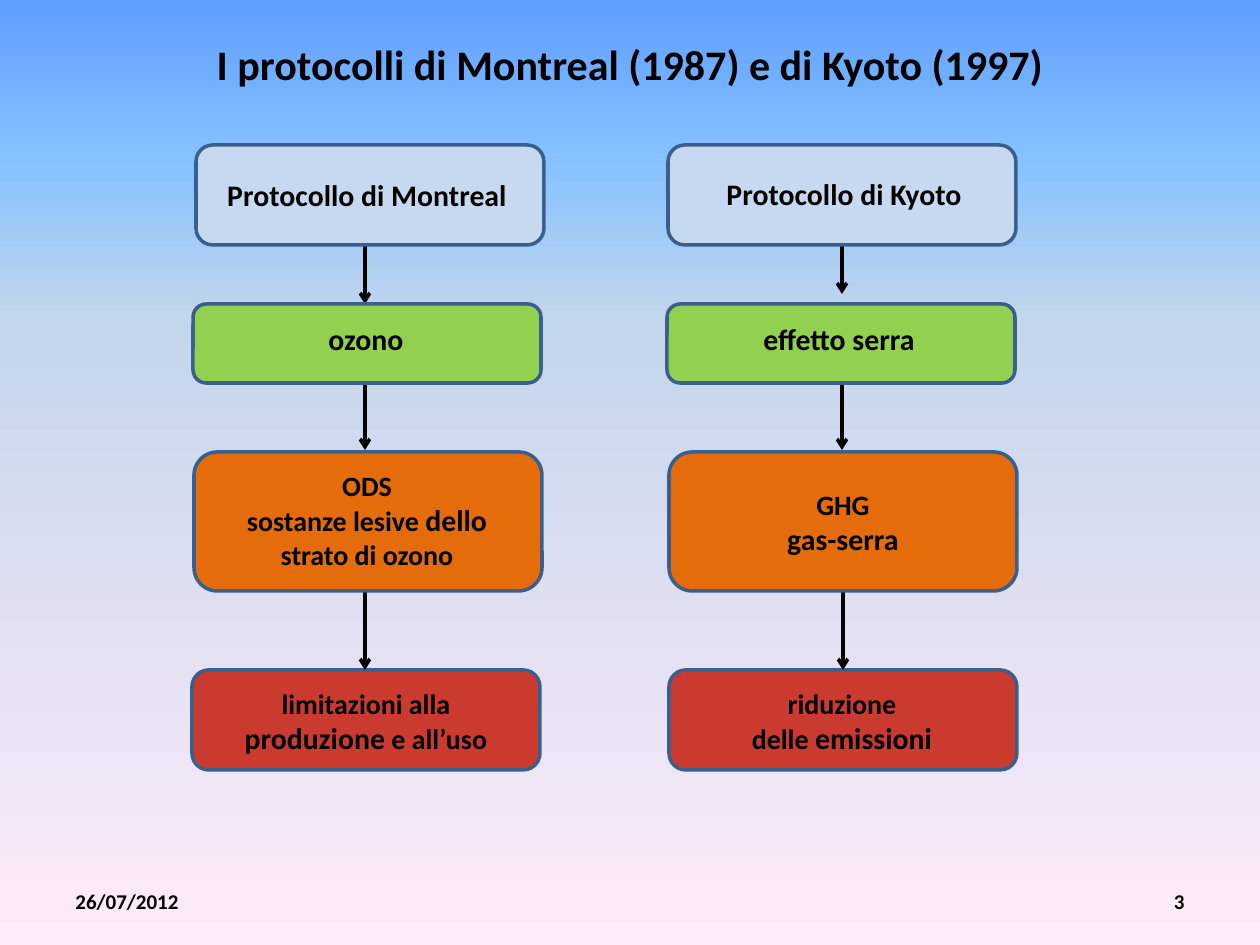
"""Build the slide on the Montreal and Kyoto protocols as two flow columns."""
from dataclasses import dataclass

from lxml.etree import SubElement
from pptx import Presentation
from pptx.dml.color import RGBColor
from pptx.enum.shapes import MSO_CONNECTOR as Connector, MSO_SHAPE as Preset
from pptx.enum.text import MSO_ANCHOR as Anchor, PP_ALIGN as Align
from pptx.oxml.ns import qn
from pptx.slide import Slide
from pptx.util import Emu, Pt

PX_PER_INCH = 126
BOX_WIDTH = 348
ARROW_LENGTH = 92
BLACK = "000000"
BORDER = "3A5F8C"
RED, ORANGE, GREEN, PALE = "CB3A2F", "E46C0A", "92D050", "C6D9F1"
GRADIENT = [(0, "5E9EFF"), (17, "85C2FF"), (34, "C4D6EB"), (100, "FFEBFA")]

Lines = list[list[tuple[str, int]]]


@dataclass
class Label:
    left: int
    top: int
    width: int
    height: int
    lines: Lines
    align: Align = Align.CENTER
    anchor: Anchor = Anchor.TOP


@dataclass
class Box:
    left: int
    top: int
    height: int
    fill: str
    text_left: int
    text_top: int
    text_height: int
    lines: Lines


@dataclass
class Arrow:
    x: int
    top: int


LIMIT_BOXES = [
    Box(192, 670, 100, RED, 192, 680, 83,
        [[("limitazioni alla", 16)], [("produzione", 17), (" e all’uso", 16)]]),
    Box(669, 670, 100, RED, 668, 680, 83,
        [[("riduzione", 16)], [("delle ", 16), ("emissioni", 17)]]),
]
ARROWS = [
    Arrow(365, 212), Arrow(365, 358), Arrow(365, 578),
    Arrow(842, 202), Arrow(842, 358), Arrow(843, 578),
]
UPPER_BOXES = [
    Box(194, 452, 139, ORANGE, 193, 462, 117,
        [[("ODS", 16)], [("sostanze lesive ", 16), ("dello", 17)],
         [("strato di ozono", 16)]]),
    Box(669, 452, 139, ORANGE, 669, 481, 83,
        [[("GHG", 16)], [("gas-serra", 17)]]),
    Box(193, 304, 79, GREEN, 192, 315, 49, [[("ozono", 17)]]),
    Box(667, 304, 79, GREEN, 665, 315, 49, [[("effetto serra", 17)]]),
    Box(196, 145, 100, PALE, 193, 171, 49, [[("Protocollo di Montreal", 17)]]),
    Box(668, 145, 100, PALE, 670, 170, 49, [[("Protocollo di Kyoto", 17)]]),
]
LABELS = [
    Label(0, 32, 1260, 123,
          [[("I protocolli di Montreal (1987) e di Kyoto (1997)", 24)]]),
    Label(63, 876, 294, 50, [[("26/07/2012", 12)]], Align.LEFT, Anchor.MIDDLE),
    Label(903, 876, 294, 50, [[("3", 12)]], Align.RIGHT, Anchor.MIDDLE),
]


def px(value: int) -> Emu:
    return Emu(round(value * 914400 / PX_PER_INCH))


def colour(value: str) -> RGBColor:
    return RGBColor.from_string(value)


def paint_background(page: Slide) -> None:
    fill = page.background.fill
    fill.gradient()
    fill.gradient_angle = 270
    stops = next(page.element.iter(qn("a:gsLst")))
    for stop in list(stops):
        stops.remove(stop)
    for position, value in GRADIENT:
        stop = SubElement(stops, qn("a:gs"), pos=str(position * 1000))
        SubElement(stop, qn("a:srgbClr"), val=value)


def draw_label(page: Slide, label: Label) -> None:
    bounds = map(px, (label.left, label.top, label.width, label.height))
    frame = page.shapes.add_textbox(*bounds).text_frame
    frame.word_wrap = True
    frame.vertical_anchor = label.anchor
    for index, line in enumerate(label.lines):
        para = frame.add_paragraph() if index else frame.paragraphs[0]
        para.alignment = label.align
        for text, size in line:
            span = para.add_run()
            span.text = text
            span.font.color.rgb = colour(BLACK)
            style = {"name": "Calibri", "size": Pt(size), "bold": True}
            for name, value in style.items():
                setattr(span.font, name, value)


def draw_box(page: Slide, box: Box) -> None:
    bounds = map(px, (box.left, box.top, BOX_WIDTH, box.height))
    shape = page.shapes.add_shape(Preset.ROUNDED_RECTANGLE, *bounds)
    shape.shadow.inherit = False
    shape.fill.solid()
    shape.fill.fore_color.rgb = colour(box.fill)
    shape.line.color.rgb = colour(BORDER)
    shape.line.width = Pt(2)
    draw_label(page, Label(box.text_left, box.text_top, BOX_WIDTH,
                           box.text_height, box.lines))


def draw_arrow(page: Slide, arrow: Arrow) -> None:
    ends = map(px, (arrow.x, arrow.top, arrow.x, arrow.top + ARROW_LENGTH))
    line = page.shapes.add_connector(Connector.STRAIGHT, *ends)
    line.line.color.rgb = colour(BLACK)
    line.line.width = Pt(2)
    properties = line.element.spPr
    SubElement(properties.find(qn("a:ln")), qn("a:tailEnd"), type="arrow")
    SubElement(properties, qn("a:effectLst"))


def main() -> None:
    deck = Presentation()
    deck.slide_width, deck.slide_height = px(1260), px(945)
    page = deck.slides.add_slide(deck.slide_layouts[6])
    paint_background(page)
    for box in LIMIT_BOXES:
        draw_box(page, box)
    for arrow in ARROWS:
        draw_arrow(page, arrow)
    for box in UPPER_BOXES:
        draw_box(page, box)
    for label in LABELS:
        draw_label(page, label)
    deck.save("out.pptx")


if __name__ == "__main__":
    main()
